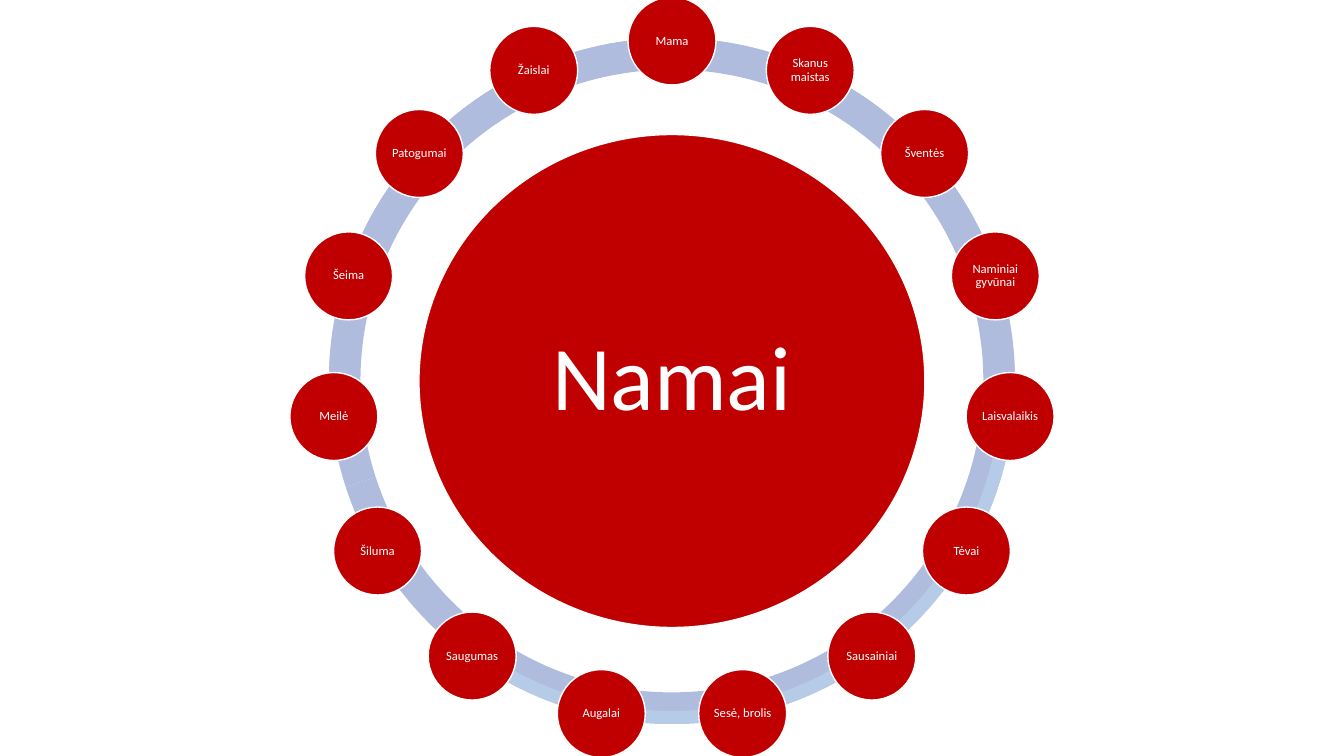
from itertools import pairwise
from math import cos, radians, sin

from pptx import Presentation
from pptx.dml.color import RGBColor
from pptx.enum.shapes import MSO_SHAPE
from pptx.enum.text import MSO_ANCHOR, PP_ALIGN
from pptx.util import Pt

ARC, OVAL = MSO_SHAPE.BLOCK_ARC, MSO_SHAPE.OVAL
MIDDLE, CENTER = MSO_ANCHOR.MIDDLE, PP_ALIGN.CENTER
PX = 914400 / 100.8
HEX = {"red": "C00000", "white": "FFFFFF", "violet": "B0BCDE", "blue": "B5CBE7"}
COLOR = {name: RGBColor.from_string(code) for name, code in HEX.items()}
MID_X, MID_Y = 672, 381
RING, ORBIT, NODE = 686, 340, 88

deck = Presentation()
deck.slide_width, deck.slide_height = round(1344 * PX), round(756 * PX)
slide = deck.slides.add_slide(deck.slide_layouts[6])


def add_shape(kind, x, y, width, height, color):
    """Add a filled shape centred on x, y."""
    box = (x - width / 2, y - height / 2, width, height)
    shape = slide.shapes.add_shape(kind, *(round(n * PX) for n in box))
    shape.shadow.inherit = False
    shape.fill.solid()
    shape.fill.fore_color.rgb = COLOR[color]
    shape.line.fill.background()
    return shape


def add_disc(text, x, y, width, height, size, inset):
    """Add a red disc with centred white text."""
    disc = add_shape(OVAL, x, y, width, height, "red")
    disc.line.color.rgb = COLOR["white"]
    disc.line.width = Pt(1)
    frame = disc.text_frame
    frame.text = text
    frame.word_wrap = True
    frame.vertical_anchor = MIDDLE
    frame.margin_left = frame.margin_right = round(inset * PX)
    frame.margin_top = frame.margin_bottom = round(inset * PX)
    para = frame.paragraphs[0]
    para.alignment = CENTER
    para.line_spacing = 0.9
    font = para.runs[0].font
    font.name, font.size = "Calibri", Pt(size)
    font.color.rgb = COLOR["white"]


# Ring: wide violet arcs, thin blue ones, and the violet top half in front
stops = [176.4, 190.8, 205.2] + [3.6 + 14.4 * i for i in range(9)]
arcs = [(start, start + 54, 0.046, "violet") for start in (108, 54, 0)]
arcs += [(*pair, 0.019, "blue") for pair in reversed(list(pairwise(stops)))]
arcs.append((162, 0, 0.046, "violet"))
for start, end, thick, color in arcs:
    arc = add_shape(ARC, MID_X, MID_Y, RING, RING, color)
    # Angles are stored in 60000ths of a degree, adjustments in 100000ths
    for i, value in enumerate((start * 0.6, end * 0.6, thick)):
        arc.adjustments[i] = value

# Hub
add_disc("Namai", MID_X, MID_Y, 506, 493, 65, 9)

# Nodes, clockwise from the top
words = ["Mama", "Skanus maistas", "Šventės", "Naminiai gyvūnai", "Laisvalaikis",
         "Tėvai", "Sausainiai", "Sesė, brolis", "Augalai", "Saugumas",
         "Šiluma", "Meilė", "Šeima", "Patogumai", "Žaislai"]
for i, word in enumerate(words):
    turn = radians(360 / len(words) * i)
    x, y = MID_X + ORBIT * sin(turn), MID_Y - ORBIT * cos(turn)
    add_disc(word, x, y, NODE, NODE, 9, 1)

deck.save("out.pptx")
